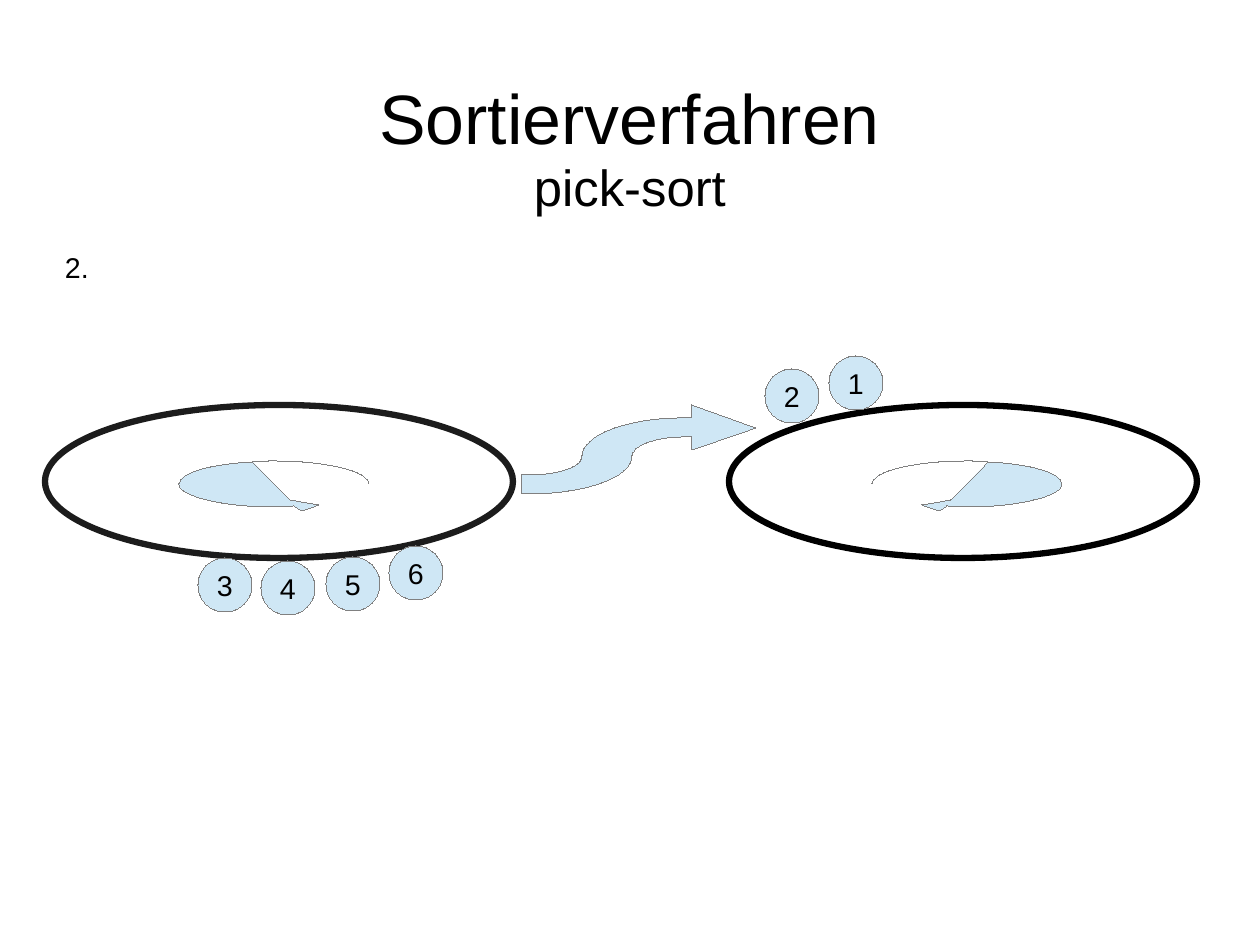
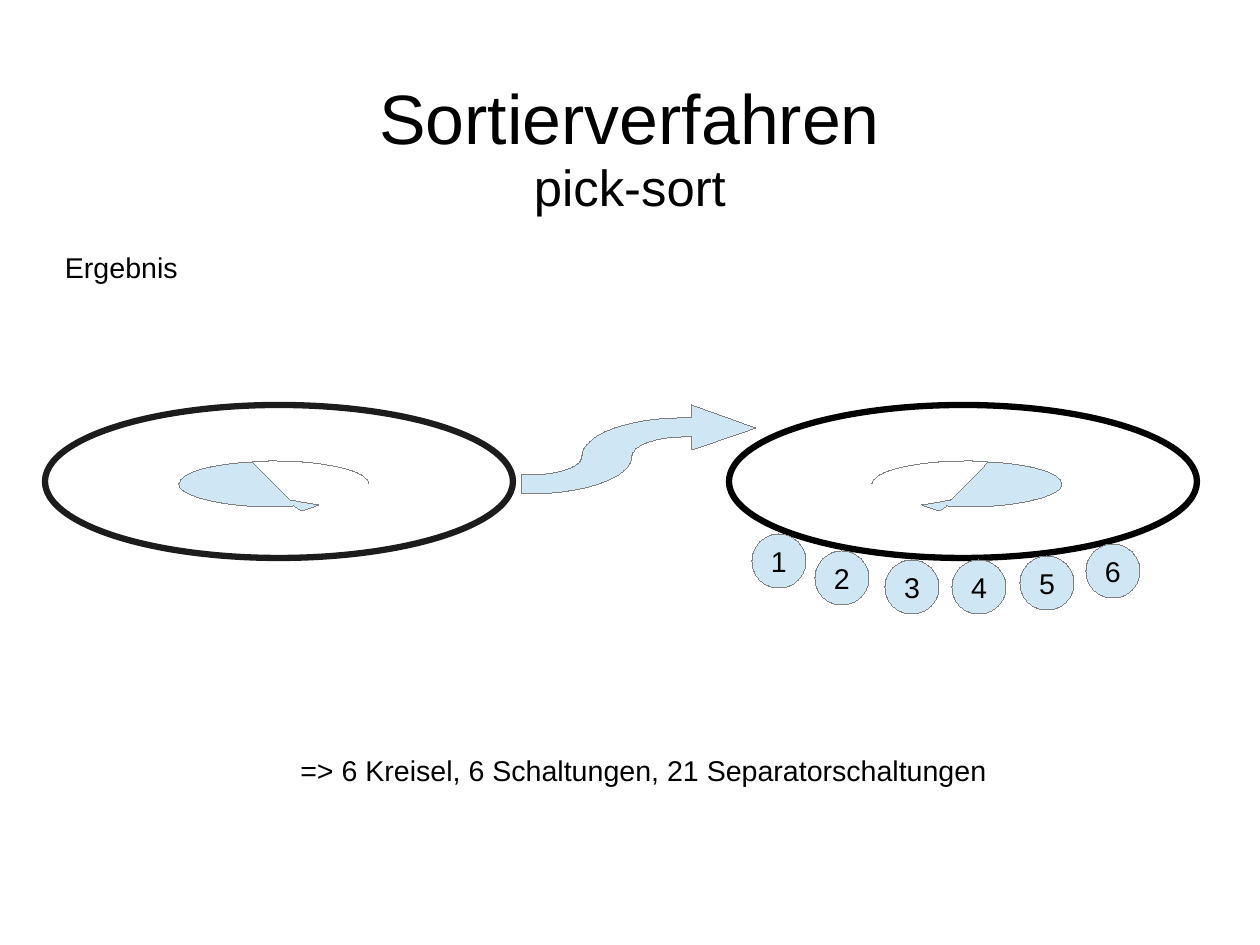
from dataclasses import dataclass

import lxml.etree
import pptx
import pptx.dml.color
import pptx.enum.shapes
import pptx.enum.text
import pptx.oxml.ns
import pptx.util

PX = 8000  # EMU per px
WIDTH, HEIGHT = 1260, 945
ALIGN = pptx.enum.text.PP_ALIGN
ANCHOR = pptx.enum.text.MSO_ANCHOR


@dataclass(frozen=True)
class Theme:
    font: str = "Arial"
    title: int = 44
    subtitle: int = 32
    body: int = 18
    text: str = "000000"
    paper: str = "FFFFFF"
    accent: str = "CFE7F5"
    outline: str = "808080"
    left_ring: str = "1C1C1C"
    right_ring: str = "000000"
    hairline: float = 0
    ring_line: float = 3.97


THEME = Theme()

# Content: balls are (number, left, top)
TITLE, SUBTITLE = "Sortierverfahren", "pick-sort"
SLIDES = [
    {"label": "2.",
     "balls": [("2", 765, 369), ("1", 829, 356), ("3", 198, 558),
               ("4", 261, 561), ("5", 326, 557), ("6", 389, 546)],
     "note": None},
    {"label": "Ergebnis",
     "balls": [("2", 815, 551), ("1", 752, 534), ("3", 885, 560),
               ("4", 952, 560), ("5", 1020, 556), ("6", 1086, 544)],
     "note": "=> 6 Kreisel, 6 Schaltungen, 21 Separatorschaltungen"},
]

# Shared places: left, top, width, height
TITLE_BOX = (63, 38, 1134, 158)
SUBTITLE_BOX = (63, 144, 1134, 85)
LABEL_BOX = (54, 244, 460, 43)
NOTE_BOX = (189, 747, 909, 43)
RINGS = [((45, 405, 468, 153), THEME.left_ring),
         ((729, 405, 468, 153), THEME.right_ring)]
BALL = 54
TEXT_INSETS = (11, 6)

# Outlines: a start, then line ends (2 numbers) and cubic curves (6 numbers)
TRANSFER_ARROW = [
    (683, 418),
    (627, 418, 582, 435, 582, 456), (582, 467, 558, 475, 528, 475),
    (522, 475), (522, 494), (528, 494),
    (586, 494, 632, 477, 632, 456), (632, 446, 655, 437, 683, 437),
    (692, 437), (692, 450), (756, 428), (692, 405), (692, 418),
]
# The arc right of the chord is retraced, so it shows as a bare line
LEFT_SPIN = [
    (369, 484),
    (369, 471, 326, 461, 274, 461), (267, 461, 260, 461, 253, 462),
    (210, 464, 179, 473, 179, 484), (179, 496, 222, 507, 274, 507),
    (294, 506), (302, 511), (319, 505), (290, 500), (253, 462),
    (260, 461, 267, 461, 274, 461), (326, 461, 369, 471, 369, 484),
]
MIRROR = 1241
RIGHT_SPIN = [tuple(n if i % 2 else MIRROR - n for i, n in enumerate(part))
              for part in LEFT_SPIN]


def emu(*lengths):
    return [pptx.util.Emu(n * PX) for n in lengths]


def rgb(color):
    return pptx.dml.color.RGBColor.from_string(color)


def write(sp, text, size, align, anchor, insets=(0, 0)):
    tf = sp.text_frame
    tf.auto_size = pptx.enum.text.MSO_AUTO_SIZE.NONE
    tf.word_wrap = True
    tf.vertical_anchor = anchor
    tf.margin_left = tf.margin_right = emu(insets[0])[0]
    tf.margin_top = tf.margin_bottom = emu(insets[1])[0]
    p = tf.paragraphs[0]
    p.alignment = align
    r = p.add_run()
    r.text = text
    r.font.name = THEME.font
    r.font.size = pptx.util.Pt(size)
    r.font.color.rgb = rgb(THEME.text)


def add_text(s, box, *style):
    write(s.shapes.add_textbox(*emu(*box)), *style)


def paint(sp, fill, line, width):
    sp.shadow.inherit = False
    sp.fill.solid()
    sp.fill.fore_color.rgb = rgb(fill)
    sp.line.color.rgb = rgb(line)
    # Written directly, as a zero width would otherwise be dropped
    sp.get_or_add_ln().set("w", str(int(pptx.util.Pt(width))))


def add_ellipse(s, box, *style):
    sp = s.shapes.add_shape(pptx.enum.shapes.MSO_SHAPE.OVAL, *emu(*box))
    paint(sp, *style)
    return sp


def add_outline(s, parts):
    ends = [part[-2:] for part in parts]
    builder = s.shapes.build_freeform(*ends[0], scale=float(PX))
    builder.add_line_segments(ends[1:], close=True)
    sp = builder.convert_to_shape()
    qn = pptx.oxml.ns.qn
    left, top = (min(axis) for axis in zip(*ends))

    # Turn the straight pieces into curves where control points are given
    lines = list(sp.element.iter(qn("a:lnTo")))
    for line, part in zip(lines, parts[1:]):
        if len(part) == 6:
            line.clear()
            line.tag = qn("a:cubicBezTo")
            for x, y in zip(part[::2], part[1::2]):
                lxml.etree.SubElement(line, qn("a:pt"),
                                      x=str(x - left), y=str(y - top))
    paint(sp, THEME.accent, THEME.outline, THEME.hairline)


def build_slide(prs, content):
    s = prs.slides.add_slide(prs.slide_layouts[5])

    # Title and rings
    title = s.shapes.title
    title.left, title.top, title.width, title.height = emu(*TITLE_BOX)
    write(title, TITLE, THEME.title, ALIGN.CENTER, ANCHOR.MIDDLE)
    for box, color in RINGS:
        add_ellipse(s, box, THEME.paper, color, THEME.ring_line)
    add_text(s, SUBTITLE_BOX, SUBTITLE, THEME.subtitle, ALIGN.CENTER, ANCHOR.MIDDLE)

    # Numbered balls and slide label
    for number, left, top in content["balls"]:
        sp = add_ellipse(s, (left, top, BALL, BALL),
                         THEME.accent, THEME.outline, THEME.hairline)
        write(sp, number, THEME.body, ALIGN.CENTER, ANCHOR.MIDDLE)
    add_text(s, LABEL_BOX, content["label"], THEME.body, ALIGN.LEFT, ANCHOR.TOP,
             TEXT_INSETS)

    # Transfer arrow and the two rotation marks
    for parts in (TRANSFER_ARROW, LEFT_SPIN, RIGHT_SPIN):
        add_outline(s, parts)

    if content["note"]:
        add_text(s, NOTE_BOX, content["note"], THEME.body, ALIGN.CENTER, ANCHOR.TOP,
                 TEXT_INSETS)


def main():
    prs = pptx.Presentation()
    prs.slide_width, prs.slide_height = emu(WIDTH, HEIGHT)
    for content in SLIDES:
        build_slide(prs, content)
    prs.save("out.pptx")


if __name__ == "__main__":
    main()
